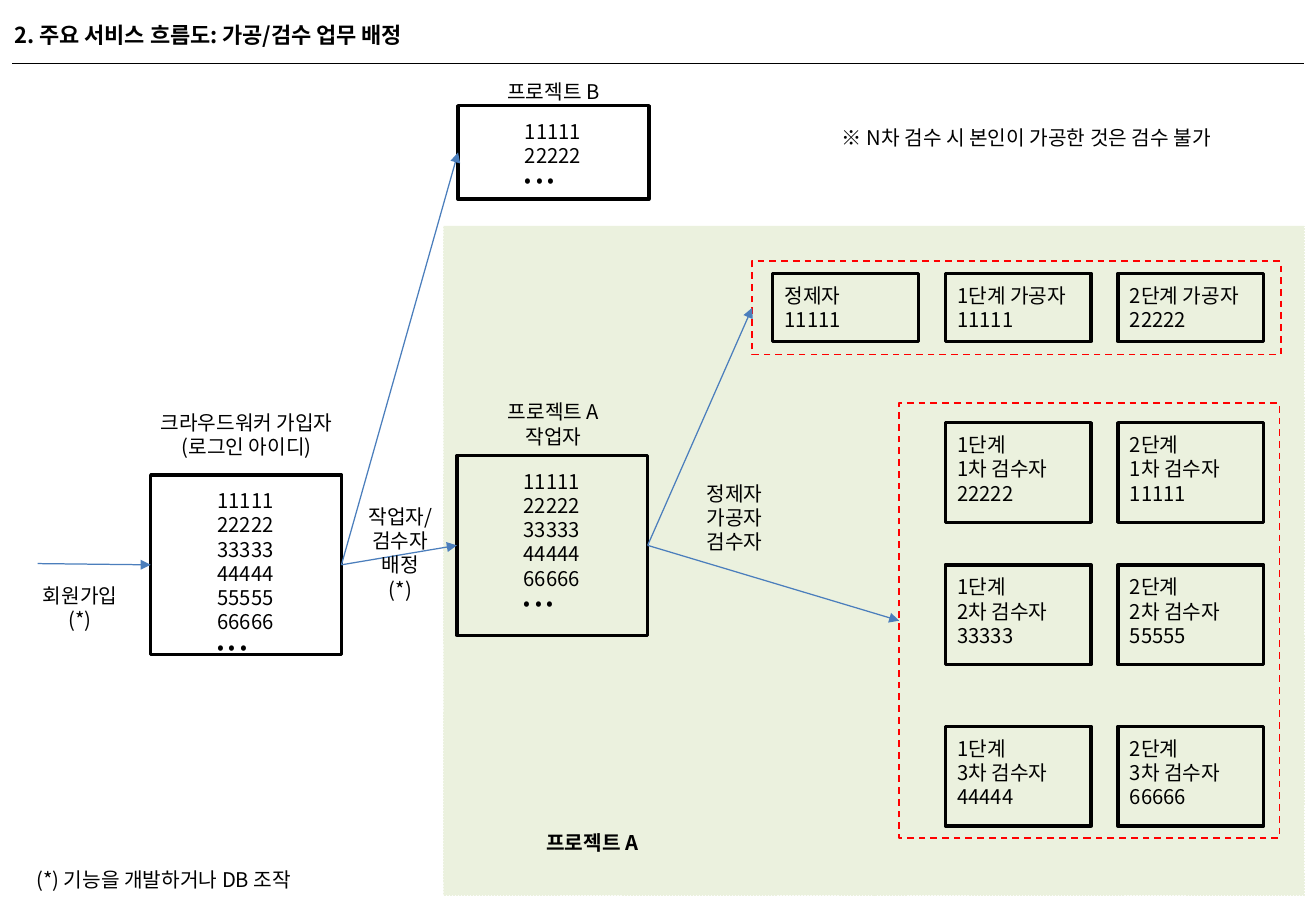
"""Builds the slide on the service flow for assigning processing and review work."""
from lxml.etree import SubElement
from pptx import Presentation
from pptx.dml.color import RGBColor
from pptx.enum.dml import MSO_LINE
from pptx.enum.shapes import MSO_CONNECTOR, MSO_SHAPE
from pptx.enum.text import MSO_ANCHOR, PP_ALIGN
from pptx.oxml.ns import qn
from pptx.util import Inches, Pt

COLORS = {"ink": "000000", "area": "EBF1DE", "arrow": "4B7EBC", "group": "FF0000"}
FONT = "Noto Sans CJK KR"
TOP, LEFT, RIGHT = 0, 1, 3

deck = Presentation()
deck.slide_width, deck.slide_height = Inches(10.83), Inches(7.5)
page = deck.slides.add_slide(deck.slide_layouts[6])


def write(shape, lines, align=PP_ALIGN.LEFT, size=12, bold=False):
    frame = shape.text_frame
    frame.word_wrap = align == PP_ALIGN.LEFT
    frame.vertical_anchor = MSO_ANCHOR.TOP
    for index, line in enumerate(lines):
        para = frame.paragraphs[0] if index == 0 else frame.add_paragraph()
        para.alignment = align
        span = para.add_run()
        span.text = line
        for name, value in {"name": FONT, "size": Pt(size), "bold": bold}.items():
            setattr(span.font, name, value)
        span.font.color.rgb = RGBColor.from_string(COLORS["ink"])
        SubElement(span.font._element, qn("a:ea")).set("typeface", FONT)


def add_box(place, color="ink", width=2, dashed=False, lines=(), indent=0.1, drop=0.08):
    shape = page.shapes.add_shape(MSO_SHAPE.RECTANGLE, *map(Inches, place))
    shape.shadow.inherit = False
    shape.fill.background()
    shape.line.color.rgb = RGBColor.from_string(COLORS[color])
    shape.line.width = Pt(width)
    if dashed:
        shape.line.dash_style = MSO_LINE.DASH
    margins = {"left": indent, "top": drop, "right": 0, "bottom": 0}
    for side, margin in margins.items():
        setattr(shape.text_frame, f"margin_{side}", Inches(margin))
    write(shape, lines)
    return shape


area = add_box((3.65, 1.86, 7.08, 5.51), "area", 0.25, True)
area.fill.solid()
area.fill.fore_color.rgb = RGBColor.from_string(COLORS["area"])

rosters = {
    "members": (1.24, 3.91, 1.48, ["11111", "22222", "33333", "44444", "55555", "66666"]),
    "project_a": (3.76, 3.75, 1.48, ["11111", "22222", "33333", "44444", "66666"]),
    "project_b": (3.77, 0.87, 0.77, ["11111", "22222"]),
}
boxes = {}
for name, (left, top, height, ids) in rosters.items():
    boxes[name] = add_box((left, top, 1.57, height), lines=ids + ["• • •"], indent=0.55, drop=0.11)

boxes["processors"] = add_box((6.19, 2.15, 4.35, 0.77), "group", 1, True)
boxes["reviewers"] = add_box((7.4, 3.32, 3.13, 3.58), "group", 1, True)

first_column, pitch = 6.36, 1.42
processors = [("정제자", "11111"), ("1단계 가공자", "11111"), ("2단계 가공자", "22222")]
for column, lines in enumerate(processors):
    add_box((first_column + column * pitch, 2.25, 1.2, 0.56), lines=lines)

reviewers = [(3.48, ("22222", "11111")), (4.65, ("33333", "55555")), (5.98, ("44444", "66666"))]
for review, (top, ids) in enumerate(reviewers, start=1):
    for stage, worker in enumerate(ids, start=1):
        lines = (f"{stage}단계", f"{review}차 검수자", worker)
        add_box((first_column + stage * pitch, top, 1.2, 0.82), lines=lines)

links = [
    (None, "members"),
    ("members", "project_a"),
    ("members", "project_b"),
    ("project_a", "processors"),
    ("project_a", "reviewers"),
    (None, None),
]
for source, target in links:
    ends = (0.31, 4.64, 1.24, 4.65) if target else (0.1, 0.52, 10.73, 0.52)
    link = page.shapes.add_connector(MSO_CONNECTOR.STRAIGHT, *map(Inches, ends))
    link.line.width = Pt(0.75)
    link.line.color.rgb = RGBColor.from_string(COLORS["arrow" if target else "ink"])
    if source:
        link.begin_connect(boxes[source], RIGHT)
    if target:
        link.end_connect(boxes[target], LEFT)
        SubElement(link.line._get_or_add_ln(), qn("a:tailEnd")).set("type", "triangle")
    SubElement(link._element.spPr, qn("a:effectLst"))

centered, bold = {"align": PP_ALIGN.CENTER}, {"bold": True}
labels = [
    ((0.02, 0.13, 10.52, 0.32), ["2. 주요 서비스 흐름도: 가공/검수 업무 배정"], {"size": 13, **bold}),
    ((6.83, 0.98, 3.71, 0.3), ["※ N차 검수 시 본인이 가공한 것은 검수 불가"], {}),
    ((0.2, 7.09, 2.52, 0.3), ["(*) 기능을 개발하거나 DB 조작"], {}),
    ((1.14, 3.33, 1.78, 0.5), ["크라우드워커 가입자", "(로그인 아이디)"], centered),
    ((4.03, 3.24, 1.05, 0.5), ["프로젝트 A", "작업자"], centered),
    ((4.04, 0.6, 1.03, 0.3), ["프로젝트 B"], centered),
    ((2.91, 4.1, 0.77, 0.91), ["작업자/", "검수자", "배정", "(*)"], centered),
    ((0.22, 4.75, 0.88, 0.5), ["회원가입", "(*)"], centered),
    ((5.69, 3.91, 0.71, 0.71), ["정제자", "가공자", "검수자"], centered),
    ((4.35, 6.79, 1.05, 0.3), ["프로젝트 A"], {**centered, **bold}),
]
for place, lines, style in labels:
    write(page.shapes.add_textbox(*map(Inches, place)), lines, **style)

deck.save("out.pptx")
